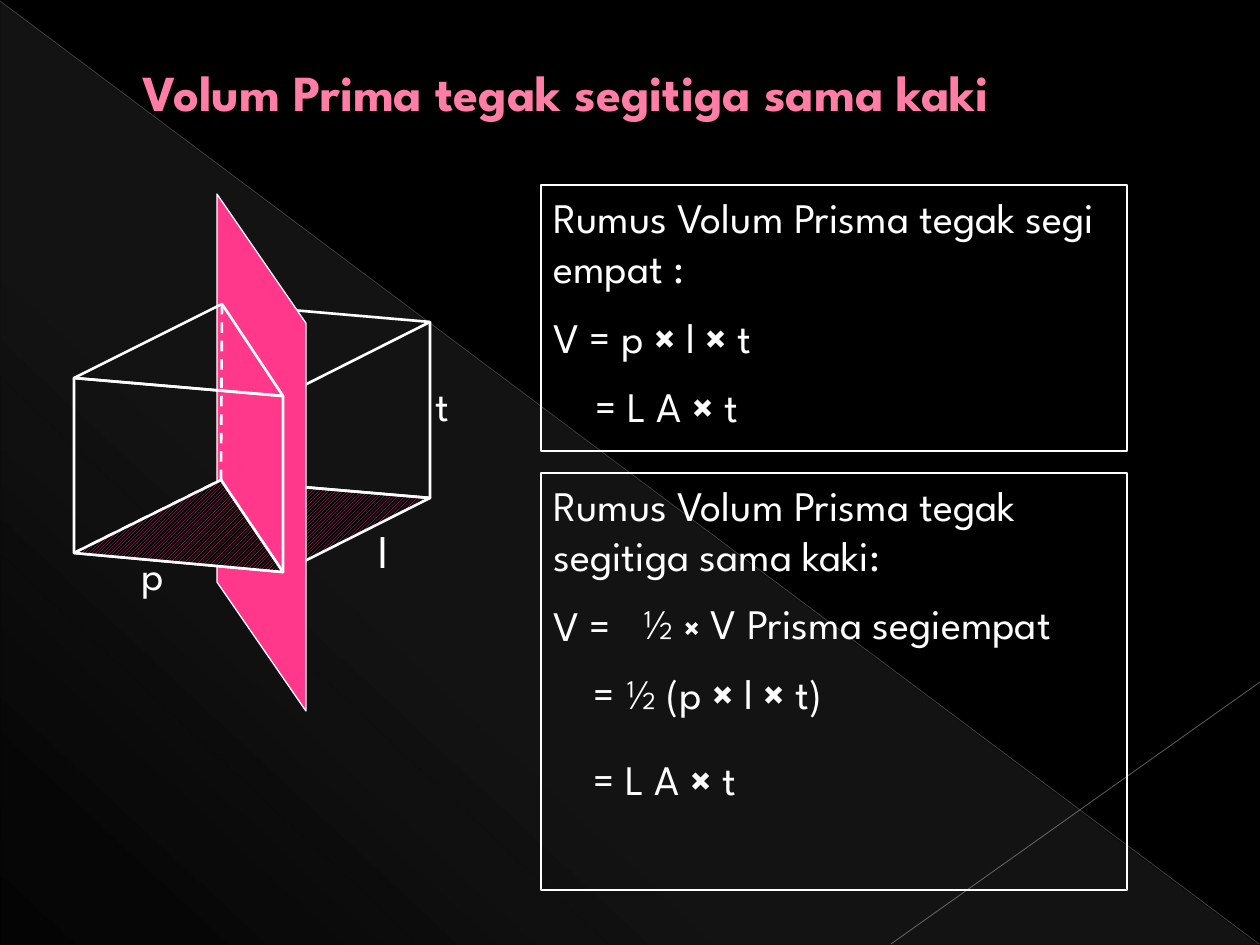
from lxml import etree
from pptx import Presentation
from pptx.dml.color import RGBColor
from pptx.enum.dml import MSO_LINE, MSO_PATTERN
from pptx.enum.shapes import MSO_CONNECTOR, MSO_SHAPE
from pptx.enum.text import MSO_ANCHOR, MSO_AUTO_SIZE, PP_ALIGN
from pptx.oxml import parse_xml
from pptx.oxml.ns import nsdecls, qn
from pptx.util import Inches, Pt

SCALE = Inches(1) / 126
DASH = MSO_LINE.DASH
HATCH = MSO_PATTERN.DARK_UPWARD_DIAGONAL
LEFT, CENTER = PP_ALIGN.LEFT, PP_ALIGN.CENTER
FONT = "League Spartan"
WHITE, BLACK, PINK, TITLE_PINK = "FFFFFF", "000000", "FF388C", "FF7DA7"

# Corners of the prism: upper face, then the lower face below it
TOP_LEFT, TOP_BACK, TOP_FRONT, TOP_RIGHT = (74, 378), (222, 304), (283, 396), (430, 322)
LOW_LEFT, LOW_BACK, LOW_FRONT, LOW_RIGHT = (74, 553), (221, 480), (283, 572), (430, 498)


def px(length):
    return round(length * SCALE)


def colour(code):
    return RGBColor.from_string(code)


def style_line(shape, code, width, dash=None):
    shape.line.color.rgb = colour(code)
    shape.line.width = Pt(width)
    if dash:
        shape.line.dash_style = dash


def add_segment(page, start, end, code=WHITE, width=1.5, dash=None, opacity=100):
    segment = page.shapes.add_connector(
        MSO_CONNECTOR.STRAIGHT, *[px(value) for value in start + end])
    style_line(segment, code, width, dash)
    if opacity < 100:
        for tint in segment._element.spPr.iter(qn("a:srgbClr")):
            etree.SubElement(tint, qn("a:alpha"), val=str(opacity * 1000))
    etree.SubElement(segment._element.spPr, qn("a:effectLst"))


def add_outline(page, points, close=True, dash=None, hatched=False):
    builder = page.shapes.build_freeform(*points[0], scale=SCALE)
    builder.add_line_segments(points[1:], close=close)
    outline = builder.convert_to_shape()
    outline.shadow.inherit = False
    if hatched:
        outline.fill.patterned()
        outline.fill.pattern = HATCH
        outline.fill.fore_color.rgb = colour(PINK)
        outline.fill.back_color.rgb = colour(BLACK)
    else:
        outline.fill.background()
    style_line(outline, WHITE, 1.5, dash)


def add_preset(page, kind, left, top, width, height):
    shape = page.shapes.add_shape(kind, px(left), px(top), px(width), px(height))
    shape.shadow.inherit = False
    return shape


def add_backdrop(page):
    triangle = add_preset(page, MSO_SHAPE.RIGHT_TRIANGLE, 1, 2, 1258, 943)
    triangle.line.fill.background()
    stops = "".join(
        f'<a:gs pos="{place * 1000}"><a:srgbClr val="D2D2D2">'
        f'<a:alpha val="{opacity * 1000}"/></a:srgbClr></a:gs>'
        for place, opacity in [(0, 10), (70, 8), (100, 1)])
    gradient = parse_xml(
        f'<a:gradFill {nsdecls("a")} rotWithShape="1"><a:gsLst>{stops}</a:gsLst>'
        f'<a:lin ang="{133 * 60000}" scaled="0"/></a:gradFill>')
    triangle._element.spPr.find(qn("a:prstGeom")).addnext(gradient)
    add_segment(page, (0, 1), (1259, 944), "BFBFBF", 0.39, opacity=35)
    add_segment(page, (1260, 682), (891, 944), "C6C6C6", 0.47, opacity=45)


def fill_text(shape, lines, align=LEFT, font=FONT, times_size=24):
    """Write (text, indent) lines, with every multiplication sign in bold."""
    frame = shape.text_frame
    frame.word_wrap = True
    frame.auto_size = MSO_AUTO_SIZE.NONE
    frame.vertical_anchor = MSO_ANCHOR.TOP
    for number, (text, indent) in enumerate(lines):
        para = frame.add_paragraph() if number else frame.paragraphs[0]
        para.alignment = align
        if number:
            para.space_before = Pt(11)
        if indent:
            para._p.get_or_add_pPr().set("marL", str(px(indent)))
        para.font.name = font
        para.font.size = Pt(24)
        para.font.color.rgb = colour(WHITE)
        for place, piece in enumerate(text.split("×")):
            if place:
                times = para.add_run()
                times.text = "×"
                times.font.bold = True
                times.font.size = Pt(times_size)
            para.add_run().text = piece


def add_text(page, text, left, top, width, **options):
    box = page.shapes.add_textbox(px(left), px(top), px(width), px(63))
    fill_text(box, [(text, 0)], **options)


def add_panel(page, top, height, lines):
    panel = add_preset(page, MSO_SHAPE.RECTANGLE, 541, top, 586, height)
    panel.fill.background()
    style_line(panel, WHITE, 0.75)
    fill_text(panel, lines)


def add_prism(page):
    """Draw the back half, the cutting plane over it, then the front half."""
    add_outline(page, [LOW_BACK, LOW_FRONT, LOW_RIGHT], hatched=True)
    add_outline(page, [TOP_RIGHT, LOW_RIGHT, LOW_BACK, TOP_BACK])
    add_outline(page, [LOW_FRONT, TOP_FRONT, TOP_RIGHT], close=False)
    add_segment(page, TOP_FRONT, TOP_BACK)

    plane = add_preset(page, MSO_SHAPE.PARALLELOGRAM, 3, 408, 517, 89)
    plane.rotation = 270
    plane.adjustments[0] = 1.45
    plane.fill.solid()
    plane.fill.fore_color.rgb = colour(PINK)
    style_line(plane, WHITE, 0.75)

    add_outline(page, [LOW_LEFT, TOP_LEFT, TOP_FRONT, LOW_FRONT])
    add_outline(page, [TOP_LEFT, TOP_BACK, TOP_FRONT])
    add_outline(page, [TOP_BACK, LOW_BACK, LOW_LEFT], close=False, dash=DASH)
    add_segment(page, LOW_BACK, LOW_FRONT, dash=DASH)
    add_outline(page, [LOW_BACK, LOW_LEFT, LOW_FRONT], hatched=True)


def set_title(page, text):
    title = page.shapes.title
    title.left, title.top, title.width, title.height = px(63), px(45), px(1134), px(92)
    title.text_frame.text = text
    title.text_frame.auto_size = MSO_AUTO_SIZE.NONE
    title.text_frame.vertical_anchor = MSO_ANCHOR.MIDDLE
    para = title.text_frame.paragraphs[0]
    para._p.get_or_add_pPr().set("marL", str(px(67)))
    para.alignment = LEFT
    para.font.name = FONT
    para.font.size = Pt(28.8)
    para.font.bold = True
    para.font.color.rgb = colour(TITLE_PINK)
    page.shapes._spTree.append(title._element)  # in front of the backdrop


def main():
    deck = Presentation()
    deck.slide_width, deck.slide_height = px(1260), px(945)
    page = deck.slides.add_slide(deck.slide_layouts[5])
    page.background.fill.solid()
    page.background.fill.fore_color.rgb = colour(BLACK)

    add_backdrop(page)
    add_prism(page)
    add_panel(page, 185, 266, [
        ("Rumus Volum Prisma tegak segi empat :", 0),
        ("V = p × l × t", 0),
        ("= L A × t", 42),
    ])
    add_panel(page, 473, 417, [
        ("Rumus Volum Prisma tegak segitiga sama kaki:", 0),
        ("V =", 0),
    ])
    add_text(page, "½ × V Prisma segiempat", 630, 591, 536, times_size=18)
    add_text(page, "= ½ (p × l × t)", 581, 661, 387)
    add_text(page, "= L A × t", 581, 747, 387)
    add_text(page, "t", 413, 373, 59, align=CENTER)
    add_text(page, "l", 353, 520, 59, align=CENTER, font="Lato")
    add_text(page, "p", 123, 542, 59, align=CENTER)
    set_title(page, "Volum Prima tegak segitiga sama kaki")
    deck.save("out.pptx")


if __name__ == "__main__":
    main()
